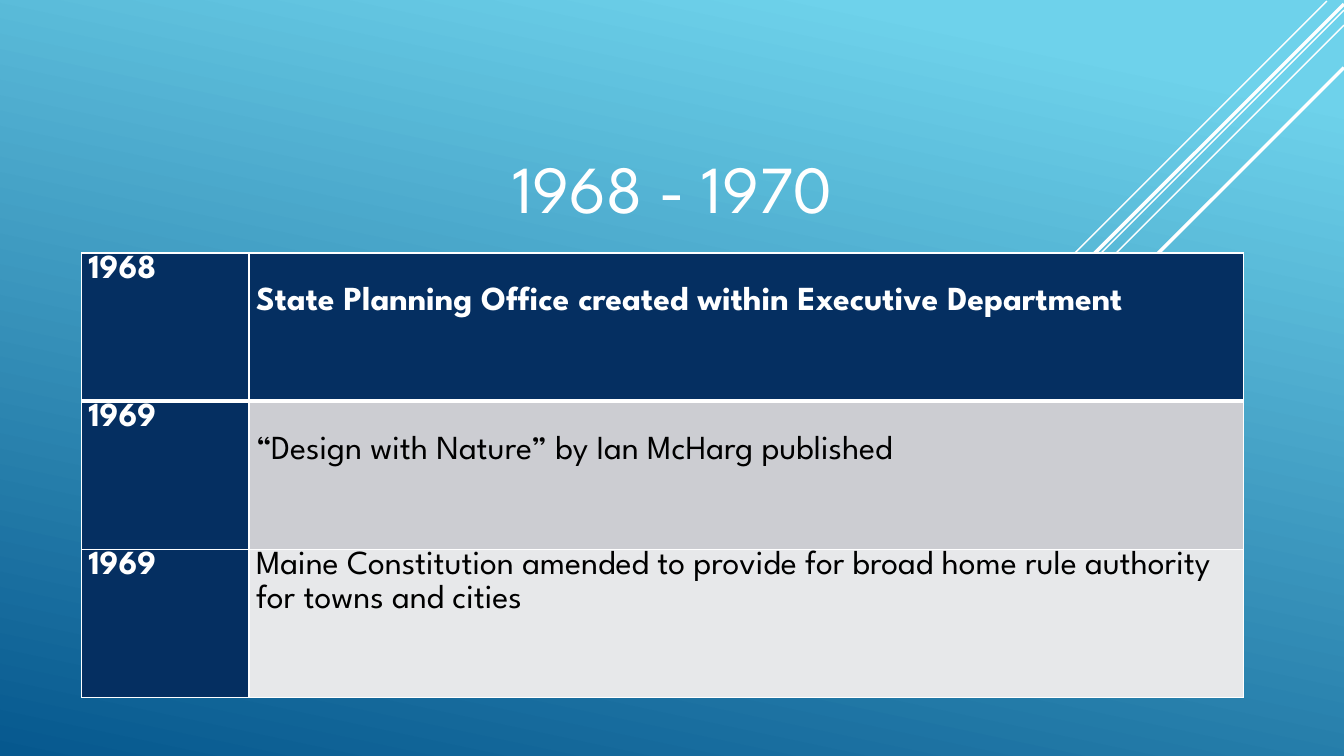
"""Build the 1968 - 1970 planning timeline slide."""
from dataclasses import dataclass

import pptx
import pptx.dml.color
import pptx.enum.shapes
import pptx.enum.text
import pptx.oxml
import pptx.oxml.ns
import pptx.util

Inches = pptx.util.Inches
Pt = pptx.util.Pt


@dataclass(frozen=True)
class Theme:
    font: str = "League Spartan"
    title_size: int = 48
    body_size: int = 24
    white: str = "FFFFFF"
    black: str = "000000"
    navy: str = "052F61"
    sky: str = "6ED2EB"
    ocean: str = "06588E"


THEME = Theme()
WIDTH, HEIGHT = 13.33, 7.5
TITLE = "1968 - 1970"
TITLE_BOX = (1.67, 1.23, 10, 1.07)
TABLE_LEFT, TABLE_TOP = 0.81, 2.51
COLUMN_WIDTHS = (1.66, 9.86)
ROW_HEIGHT = 1.47
SIDE_MARGIN = 0.07
LOWERED = 0.32
EVENTS = [
    ("1968", "State Planning Office created within Executive Department",
     THEME.navy, THEME.white, LOWERED),
    ("1969", "“Design with Nature” by Ian McHarg published",
     "CCCDD2", THEME.black, LOWERED),
    ("1969", "Maine Constitution amended to provide for broad home rule authority "
     "for towns and cities", "E7E8EA", THEME.black, 0),
]
RAYS = [
    (13.16, 0.01, 4.16, 1),
    (WIDTH, 0.1, 6.65, 1),
    (WIDTH, 0.25, 5.42, 1),
    (WIDTH, 0.04, 5.3, 2.5),
    (WIDTH, 0.67, 4.75, 2.5),
]


def rgb(value):
    return pptx.dml.color.RGBColor.from_string(value)


def add_run(paragraph, text, size, color, bold=False):
    run = paragraph.add_run()
    run.text = text
    run.font.name = THEME.font
    run.font.size = Pt(size)
    run.font.bold = bold
    run.font.color.rgb = rgb(color)


def paint_background(slide):
    fill = slide.background.fill
    fill.gradient()
    fill.gradient_angle = 360 - 102
    for stop, position, color in zip(fill.gradient_stops, (0.1, 1), (THEME.sky, THEME.ocean)):
        stop.position = position
        stop.color.rgb = rgb(color)


def add_ray(slide, left, top, reach, weight):
    ray = slide.shapes.add_connector(
        pptx.enum.shapes.MSO_CONNECTOR.STRAIGHT,
        Inches(left), Inches(top), Inches(left - reach), Inches(top + reach))
    ray.line.color.rgb = rgb(THEME.white)
    ray.line.width = Pt(weight)
    ray._element.spPr.append(pptx.oxml.parse_xml(
        f'<a:effectLst {pptx.oxml.ns.nsdecls("a")}/>'))


def add_title(slide):
    frame = slide.shapes.add_textbox(*map(Inches, TITLE_BOX)).text_frame
    frame.word_wrap = True
    frame.vertical_anchor = pptx.enum.text.MSO_ANCHOR.BOTTOM
    paragraph = frame.paragraphs[0]
    paragraph.alignment = pptx.enum.text.PP_ALIGN.CENTER
    add_run(paragraph, TITLE, THEME.title_size, THEME.white)


def set_borders(cell, row):
    weights = {"L": 1, "R": 1, "T": 3 if row == 1 else 1, "B": 3 if row == 0 else 1}
    properties = cell._tc.get_or_add_tcPr()
    for side, weight in weights.items():
        properties.append(pptx.oxml.parse_xml(
            f'<a:ln{side} {pptx.oxml.ns.nsdecls("a")} w="{Pt(weight)}"><a:solidFill>'
            f'<a:srgbClr val="{THEME.white}"/></a:solidFill></a:ln{side}>'))


def fill_cell(cell, row, text, fill, color, bold, margin_top):
    set_borders(cell, row)
    cell.fill.solid()
    cell.fill.fore_color.rgb = rgb(fill)
    cell.margin_left = cell.margin_right = Inches(SIDE_MARGIN)
    cell.margin_top = Inches(margin_top)
    cell.margin_bottom = 0
    paragraph = cell.text_frame.paragraphs[0]
    paragraph.line_spacing = 1.07
    add_run(paragraph, text, THEME.body_size, color, bold)


def add_timeline(slide):
    table = slide.shapes.add_table(
        len(EVENTS), len(COLUMN_WIDTHS), Inches(TABLE_LEFT), Inches(TABLE_TOP),
        Inches(sum(COLUMN_WIDTHS)), Inches(ROW_HEIGHT * len(EVENTS))).table
    table.horz_banding = False
    for column, width in zip(table.columns, COLUMN_WIDTHS):
        column.width = Inches(width)
    for row, (year, event, fill, color, margin_top) in enumerate(EVENTS):
        table.rows[row].height = Inches(ROW_HEIGHT)
        fill_cell(table.cell(row, 0), row, year, THEME.navy, THEME.white, True, 0)
        fill_cell(table.cell(row, 1), row, event, fill, color, row == 0, margin_top)


def main():
    presentation = pptx.Presentation()
    presentation.slide_width = Inches(WIDTH)
    presentation.slide_height = Inches(HEIGHT)
    slide = presentation.slides.add_slide(presentation.slide_layouts[6])
    paint_background(slide)
    for ray in RAYS:
        add_ray(slide, *ray)
    add_title(slide)
    add_timeline(slide)
    presentation.save("out.pptx")


if __name__ == "__main__":
    main()
